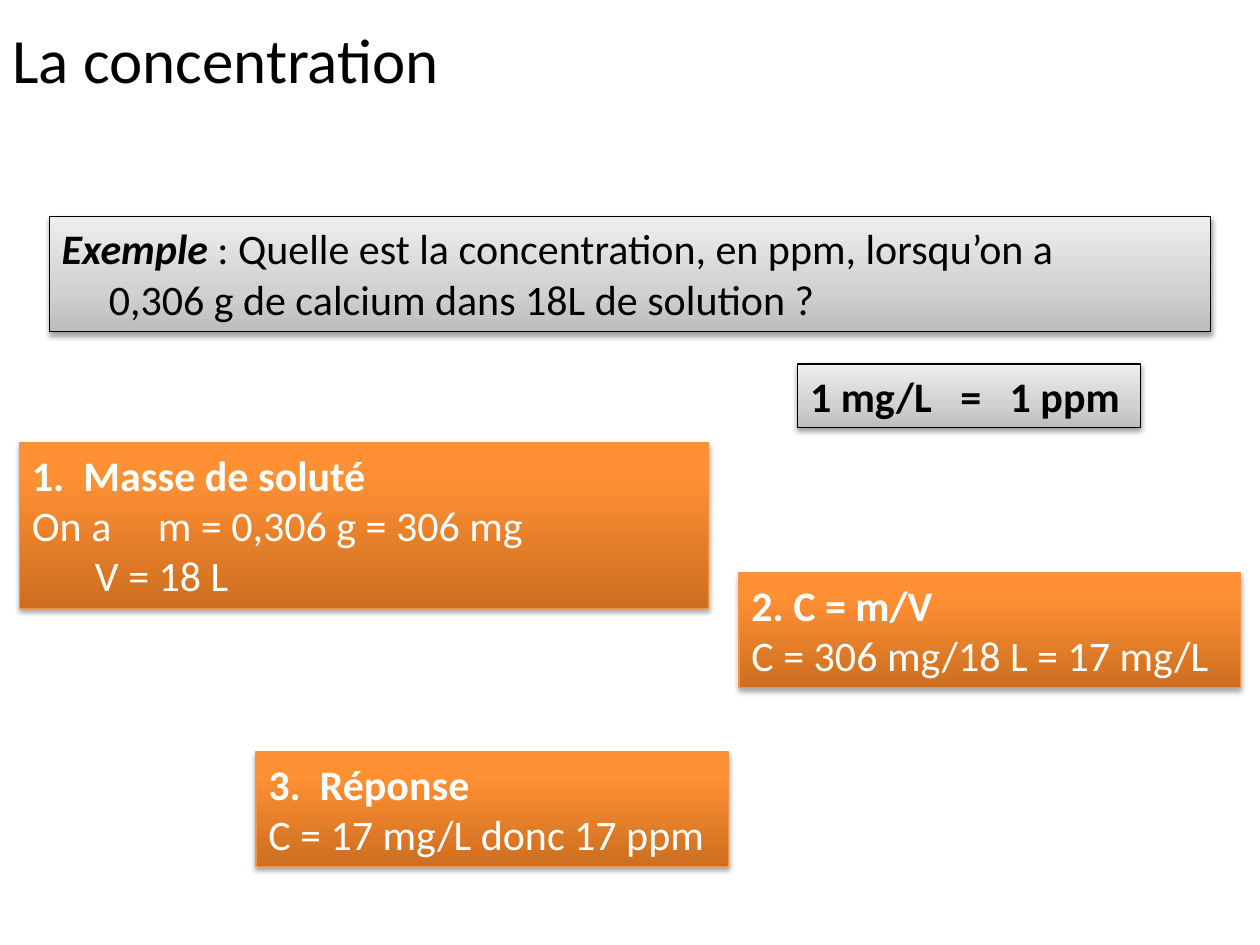
import pptx
import pptx.util
import pptx.dml.color
import pptx.enum.shapes
import pptx.enum.text
import pptx.oxml
import pptx.oxml.ns

Pt = pptx.util.Pt
RGB = pptx.dml.color.RGBColor
BLACK = RGB(0, 0, 0)
WHITE = RGB(0xFF, 0xFF, 0xFF)
ORANGE_LINE = RGB(0xF6, 0x92, 0x40)
ORANGE_STOPS = [(0, RGB(0xCC, 0x6E, 0x20)), (80, RGB(0xFF, 0x90, 0x34)),
                (100, RGB(0xFF, 0x91, 0x36))]
GREY_STOPS = [(0, RGB(0xBD, 0xBD, 0xBD)), (35, RGB(0xD1, 0xD1, 0xD1)),
              (100, RGB(0xEE, 0xEE, 0xEE))]

# Looks of the two kinds of box; shadow is (opacity %, distance in points)
ORANGE = {"stops": ORANGE_STOPS, "line": ORANGE_LINE, "text": WHITE, "shadow": (35, 1.8)}
GREY = {"stops": GREY_STOPS, "line": BLACK, "text": BLACK, "shadow": (38, 1.6)}

BOLD = {"bold": True}
BOLD_ITALIC = {"bold": True, "italic": True}
PLAIN = {"bold": False}


def add_xml(parent, xml):
    ns = pptx.oxml.ns.nsdecls("a")
    parent.append(pptx.oxml.parse_xml(xml.replace(" ", f" {ns} ", 1)))


def add_run(p, text, size, color, **formats):
    r = p.add_run()
    r.text = text
    for name, value in {"name": "Calibri", "size": Pt(size), **formats}.items():
        setattr(r.font, name, value)
    r.font.color.rgb = color


def set_gradient(sp, stops):
    """Vertical gradient that starts at the bottom edge."""
    sp.fill.gradient()
    sp.fill.gradient_angle = 90
    gs_list = sp._element.spPr.find(".//" + pptx.oxml.ns.qn("a:gsLst"))
    for gs in list(gs_list):
        gs_list.remove(gs)
    for pos, color in stops:
        add_xml(gs_list, f'<a:gs pos="{pos * 1000}"><a:srgbClr val="{color}"/></a:gs>')


def set_shadow(sp, opacity, distance):
    sp.shadow.inherit = False
    effects = sp._element.spPr.find(pptx.oxml.ns.qn("a:effectLst"))
    add_xml(effects, f'<a:outerShdw blurRad="{Pt(3.1)}" dist="{Pt(distance)}" '
                     'dir="5400000" rotWithShape="0"><a:srgbClr val="000000">'
                     f'<a:alpha val="{opacity * 1000}"/></a:srgbClr></a:outerShdw>')


def add_title(slide, box, text):
    tf = slide.shapes.add_textbox(*map(Pt, box)).text_frame
    tf.word_wrap = True
    tf.vertical_anchor = pptx.enum.text.MSO_ANCHOR.MIDDLE
    add_run(tf.paragraphs[0], text, 36, BLACK)


def add_box(slide, box, look, paragraphs, hanging=0):
    """Shaded box; each paragraph is a list of (text, format) runs."""
    sp = slide.shapes.add_shape(pptx.enum.shapes.MSO_SHAPE.RECTANGLE, *map(Pt, box))
    set_gradient(sp, look["stops"])
    sp.line.color.rgb = look["line"]
    sp.line.width = Pt(0.75)
    set_shadow(sp, *look["shadow"])
    tf = sp.text_frame
    for name, value in {"word_wrap": True,
                        "vertical_anchor": pptx.enum.text.MSO_ANCHOR.TOP,
                        "auto_size": pptx.enum.text.MSO_AUTO_SIZE.SHAPE_TO_FIT_TEXT}.items():
        setattr(tf, name, value)
    for i, runs in enumerate(paragraphs):
        p = tf.add_paragraph() if i else tf.paragraphs[0]
        p.alignment = pptx.enum.text.PP_ALIGN.LEFT
        if hanging:
            pPr = p._p.get_or_add_pPr()
            pPr.set("marL", str(Pt(hanging)))
            pPr.set("indent", str(-Pt(hanging)))
        for j, (text, formats) in enumerate(runs):
            if text == "\n":
                p.add_line_break()
            else:
                add_run(p, text, 24, look["text"], **formats)


def main():
    prs = pptx.Presentation()
    prs.slide_width, prs.slide_height = Pt(720), Pt(540)
    slide = prs.slides.add_slide(prs.slide_layouts[6])

    add_title(slide, (0, -11.5, 489.6, 90), "La concentration")

    # Question and unit reminder
    add_box(slide, (28.1, 123.8, 663.8, 65.5), GREY, [[
        ("Exemple", BOLD_ITALIC),
        (" : Quelle est la concentration, en ppm, lorsqu’on a", PLAIN),
        ("\n", PLAIN),
        ("0,306 g de calcium dans 18L de solution ?", PLAIN)]], hanging=27)
    add_box(slide, (455.8, 208.1, 195.8, 36.4), GREY, [[("1 mg/L   =   1 ppm", BOLD)]])

    # Solution steps: a bold heading, then plain lines
    steps = [
        ((11.2, 253.1, 393.8, 94.5), "1.  Masse de soluté",
         ["On a \tm = 0,306 g = 306 mg", "\tV = 18 L"]),
        ((422.3, 327.4, 286.8, 65.5), "2. C = m/V", ["C = 306 mg/18 L = 17 mg/L"]),
        ((146.2, 429.7, 270, 65.5), "3.  Réponse", ["C = 17 mg/L donc 17 ppm"]),
    ]
    for box, heading, lines in steps:
        add_box(slide, box, ORANGE,
                [[(heading, BOLD)]] + [[(line, PLAIN)] for line in lines])

    prs.save("out.pptx")


if __name__ == "__main__":
    main()
